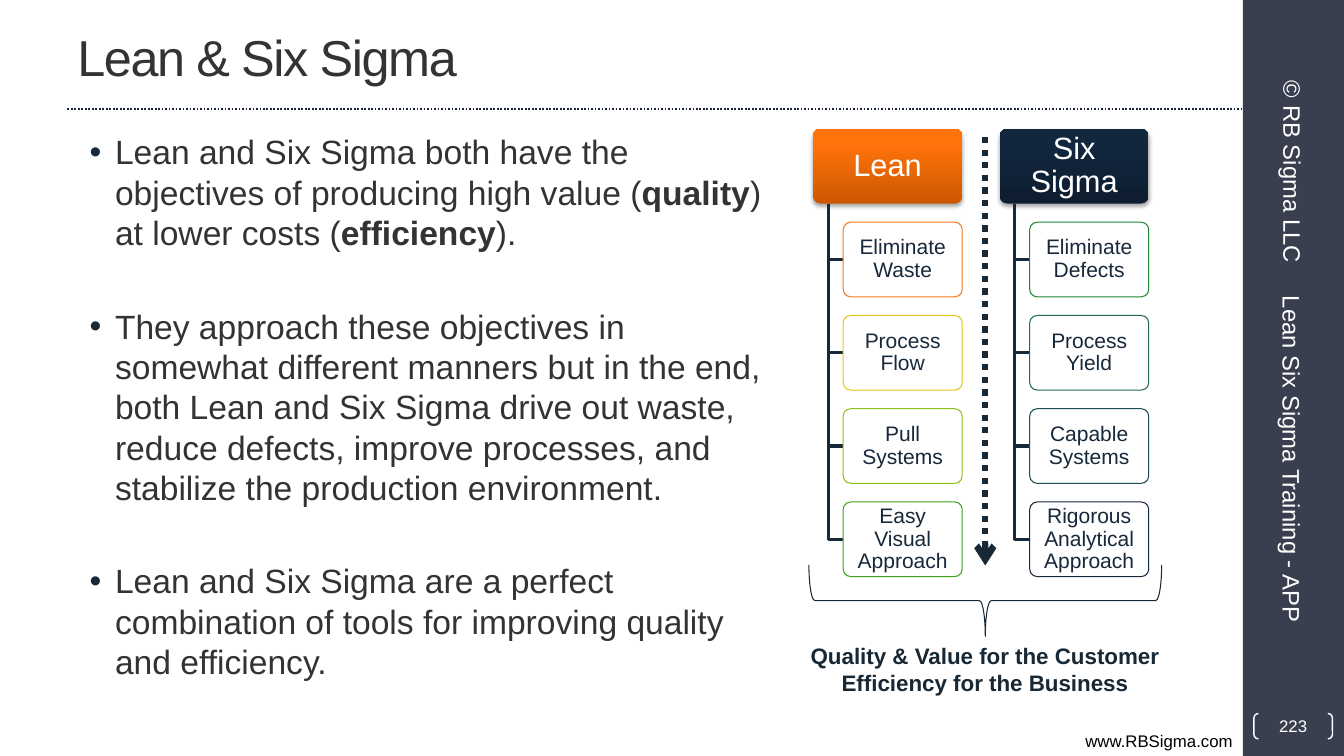
from lxml import etree
from pptx import Presentation
from pptx import util as u
from pptx.dml import color
from pptx.enum import dml, shapes, text
from pptx.oxml import ns

FONT = "Arial"
NAVY, INK, GREY, WHITE = "18283B", "182835", "333333", "FFFFFF"
CENTER, RIGHT = text.PP_ALIGN.CENTER, text.PP_ALIGN.RIGHT
TOP, MIDDLE = text.MSO_ANCHOR.TOP, text.MSO_ANCHOR.MIDDLE

TITLE = "Lean & Six Sigma"
POINTS = [
    [("Lean and Six Sigma both have the objectives of producing high value (", False),
     ("quality", True), (") at lower costs (", False), ("efficiency", True), (").", False)],
    [("They approach these objectives in somewhat different manners but in the end, "
      "both Lean and Six Sigma drive out waste, reduce defects, improve processes, "
      "and stabilize the production environment.", False)],
    [("Lean and Six Sigma are a perfect combination of tools for improving quality "
      "and efficiency.", False)],
]
METHODS = [
    ("Lean", ("CC5700", "FF730A", "FF730B"),
     [("Eliminate Waste", "F4791D"), ("Process Flow", "E2C814"),
      ("Pull Systems", "8CC119"), ("Easy Visual Approach", "3DA31D")]),
    ("Six Sigma", ("0E1E30", "12263E", "11263F"),
     [("Eliminate Defects", "1E8634"), ("Process Yield", "1E6B50"),
      ("Capable Systems", "1C4D52"), ("Rigorous Analytical Approach", NAVY)]),
]
OUTCOME = ["Quality & Value for the Customer", "Efficiency for the Business"]
SIDE_LABELS = [
    ("Lean Six Sigma Training - APP", (27.58, 11.51, 9.96, 1.35), None),
    ("© RB Sigma LLC", (29.72, 3.66, 5.72, 1.35), CENTER),
]
SITE, PAGE = "www.RBSigma.com", "223"

WIDTH, HEIGHT, SIDEBAR_X = 33.87, 19.05, 31.32
COLUMN_X, COLUMN_STEP = 20.49, 4.7
HEAD_Y, HEAD_W, BOX_H, ROW_STEP = 3.25, 3.76, 1.88, 2.35
TRUNK_IN, CARD_IN = 0.38, 0.76

deck = Presentation()
deck.slide_width, deck.slide_height = u.Cm(WIDTH), u.Cm(HEIGHT)
slide = deck.slides.add_slide(deck.slide_layouts[6])


def cm(*lengths):
    return [u.Cm(length) for length in lengths]


def rgb(value):
    return color.RGBColor.from_string(value)


def xml(parent, tag, **attributes):
    return etree.SubElement(parent, ns.qn("a:" + tag), attributes)


def outline(line, hue, width, dash=None):
    line.color.rgb = rgb(hue)
    line.width = u.Pt(width)
    if dash:
        line.dash_style = dash


def add_run(paragraph, words, size, hue, bold=False):
    run = paragraph.add_run()
    run.text = words
    run.font.size, run.font.name = u.Pt(size), FONT
    run.font.color.rgb, run.font.bold = rgb(hue), bold
    return run


def set_frame(frame, anchor, insets=(0.25, 0.13)):
    frame.word_wrap, frame.vertical_anchor = True, anchor
    frame.margin_left = frame.margin_right = u.Cm(insets[0])
    frame.margin_top = frame.margin_bottom = u.Cm(insets[1])
    return frame.paragraphs[0]


def add_text(box, words, size, hue, align=None, anchor=MIDDLE):
    label = slide.shapes.add_textbox(*cm(*box))
    paragraph = set_frame(label.text_frame, anchor)
    paragraph.alignment = align
    return label, add_run(paragraph, words, size, hue)


def add_box(kind, box, fill=None, edge=None, width=0.75, adjust=None):
    part = slide.shapes.add_shape(kind, *cm(*box))
    part.shadow.inherit = False
    if adjust is not None:
        part.adjustments[0] = adjust
    if fill:
        part.fill.solid()
        part.fill.fore_color.rgb = rgb(fill)
    else:
        part.fill.background()
    if edge:
        outline(part.line, edge, width)
    else:
        part.line.fill.background()
    return part


def add_line(start, end, hue, width):
    line = slide.shapes.add_connector(shapes.MSO_CONNECTOR.STRAIGHT, *cm(*start, *end))
    outline(line.line, hue, width, dml.MSO_LINE.ROUND_DOT)
    xml(line._element.spPr, "effectLst")
    return line


def add_elbow(x, top, bottom, end_x):
    builder = slide.shapes.build_freeform(*cm(x, top))
    builder.add_line_segments([cm(x, bottom), cm(end_x, bottom)], close=False)
    elbow = builder.convert_to_shape()
    elbow.shadow.inherit = False
    elbow.fill.background()
    outline(elbow.line, NAVY, 2.25)


def label_box(part, words, size, hue, insets):
    paragraph = set_frame(part.text_frame, MIDDLE, insets)
    paragraph.alignment, paragraph.line_spacing = CENTER, 0.9
    add_run(paragraph, words, size, hue)


def shade_head(head, hues):
    head.fill.gradient()
    gradient = head._element.spPr.find(ns.qn("a:gradFill"))
    for child in list(gradient):
        gradient.remove(child)
    stops = xml(gradient, "gsLst")
    for position, hue in zip((0, 80, 100), hues):
        xml(xml(stops, "gs", pos=str(position * 1000)), "srgbClr", val=hue)
    xml(gradient, "lin", ang="16200000", scaled="0")
    effects = head._element.spPr.find(ns.qn("a:effectLst"))
    shadow = xml(effects, "outerShdw", blurRad=str(u.Pt(3.1)), dist=str(u.Pt(1.8)),
                 dir="5400000", rotWithShape="0")
    xml(xml(shadow, "srgbClr", val="000000"), "alpha", val="35000")


def add_method(x, name, hues, cards):
    rounded = shapes.MSO_SHAPE.ROUNDED_RECTANGLE
    head = add_box(rounded, (x, HEAD_Y, HEAD_W, BOX_H), adjust=0.1)
    shade_head(head, hues)
    label_box(head, name, 22, WHITE, (0.18, 0.13))
    for row, (words, edge) in enumerate(cards, 1):
        y = HEAD_Y + row * ROW_STEP
        add_elbow(x + TRUNK_IN, HEAD_Y + BOX_H, y + BOX_H / 2, x + CARD_IN)
        card = add_box(rounded, (x + CARD_IN, y, HEAD_W - CARD_IN, BOX_H),
                       WHITE, edge, adjust=0.1)
        solid = card._element.spPr.find(ns.qn("a:solidFill"))
        xml(solid[0], "alpha", val="90000")
        label_box(card, words, 15, NAVY, (0.13, 0.1))


def add_points():
    body = slide.shapes.add_textbox(*cm(1.7, 3.18, 18.08, 15.24))
    paragraph = set_frame(body.text_frame, TOP)
    for index, pieces in enumerate(POINTS):
        if index:
            paragraph = body.text_frame.add_paragraph()
            paragraph.space_before = u.Pt(38)
        props = paragraph._p.get_or_add_pPr()
        props.set("marL", str(u.Cm(0.95)))
        props.set("indent", str(u.Cm(-0.64)))
        xml(xml(props, "buClr"), "srgbClr", val=NAVY)
        xml(props, "buFont", typeface=FONT)
        xml(props, "buChar", char="•")
        for words, bold in pieces:
            add_run(paragraph, words, 24, GREY, bold)


add_box(shapes.MSO_SHAPE.RECTANGLE, (SIDEBAR_X, 0, WIDTH - SIDEBAR_X, HEIGHT), "393F4E")
add_line((1.7, 2.74), (SIDEBAR_X, 2.74), "17273B", 1.25)
add_text((0, 18.29, SIDEBAR_X, 0.76), SITE, 12, "000000", RIGHT, TOP)
heading, heading_run = add_text((1.7, 0.08, 28.22, 2.67), TITLE, 36, GREY)
heading_run._r.get_or_add_rPr().set("spc", "-100")
add_points()

for column, method in enumerate(METHODS):
    add_method(COLUMN_X + column * COLUMN_STEP, *method)

arrow = add_line((24.83, 3.45), (24.83, 14.25), INK, 4.5)
xml(arrow.line._get_or_add_ln(), "tailEnd", type="arrow")
brace = add_box(shapes.MSO_SHAPE.RIGHT_BRACE, (23.93, 10.69, 1.8, 8.89), edge=INK)
brace.rotation = 90

outcome, first = add_text((19.96, 16.05, 9.73, 1.63), OUTCOME[0], 16, INK, CENTER, TOP)
first.font.bold = True
outcome_lines = outcome.text_frame.paragraphs[0]
outcome_lines.add_line_break()
add_run(outcome_lines, OUTCOME[1], 16, INK, True)

for words, box, align in SIDE_LABELS:
    side_label, _ = add_text(box, words, 17, WHITE, align)
    side_label.rotation = 90

page = add_box(shapes.MSO_SHAPE.DOUBLE_BRACKET, (31.6, 17.98, 1.98, 0.64),
               edge=WHITE, width=1, adjust=0.18)
number = set_frame(page.text_frame, MIDDLE, (0, 0))
number.alignment = CENTER
add_run(number, PAGE, 12, WHITE)

deck.save("out.pptx")
